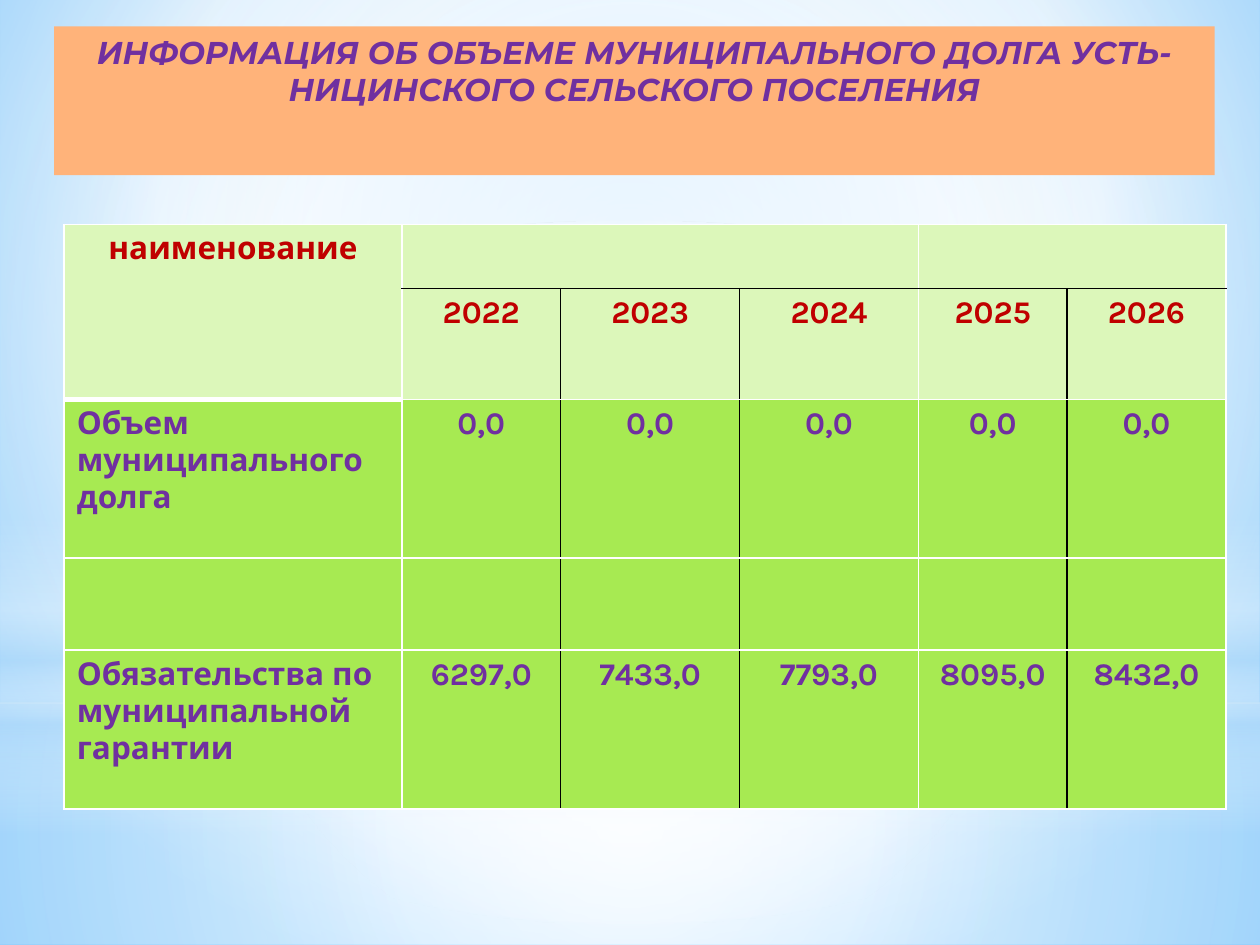
from lxml.etree import SubElement
from pptx import Presentation
from pptx.dml.color import RGBColor
from pptx.enum.shapes import MSO_SHAPE
from pptx.enum.text import MSO_ANCHOR, PP_ALIGN
from pptx.oxml.ns import qn
from pptx.util import Inches, Pt

WHITE = RGBColor(0xFF, 0xFF, 0xFF)
BLACK = RGBColor(0x00, 0x00, 0x00)
SKY = RGBColor(0x9E, 0xD5, 0xFF)
AZURE = RGBColor(0x5B, 0xB9, 0xFF)
HAZE = RGBColor(0xB4, 0xDC, 0xFA)
PEACH = RGBColor(0xFF, 0xB3, 0x7A)
PURPLE = RGBColor(0x70, 0x30, 0xA0)
RED = RGBColor(0xC0, 0x00, 0x00)
PALE_GREEN = RGBColor(0xDC, 0xF7, 0xBA)
GREEN = RGBColor(0xA7, 0xEA, 0x52)


def set_gradient(fill, owner, stops, focus):
    fill.solid()
    solid = owner.find(".//" + qn("a:solidFill"))
    gradient = SubElement(owner, qn("a:gradFill"), rotWithShape="1")
    solid.getparent().replace(solid, gradient)
    stop_list = SubElement(gradient, qn("a:gsLst"))
    for position, color, opacity in stops:
        stop = SubElement(stop_list, qn("a:gs"), pos=str(position * 1000))
        tint = SubElement(stop, qn("a:srgbClr"), val=str(color))
        if opacity < 100:
            SubElement(tint, qn("a:alpha"), val=str(opacity * 1000))
    if focus is None:
        SubElement(gradient, qn("a:lin"), ang="5400000", scaled="0")
    else:
        circle = SubElement(gradient, qn("a:path"), path="circle")
        sides = {side: str(share * 1000) for side, share in zip("ltrb", focus)}
        SubElement(circle, qn("a:fillToRect"), **sides)


def write_text(frame, text, alignment, font_format):
    paragraph = frame.paragraphs[0]
    paragraph.alignment = alignment
    run = paragraph.add_run()
    run.text = text
    run.font.color.rgb = font_format["color"]
    for attribute, value in font_format.items():
        if attribute != "color":
            setattr(run.font, attribute, value)


presentation = Presentation()
presentation.slide_width = Inches(10)
presentation.slide_height = Inches(7.5)
slide = presentation.slides.add_slide(presentation.slide_layouts[6])

backdrop = slide.background.fill
backdrop.solid()
set_gradient(backdrop, slide.element.find(".//" + qn("p:bgPr")),
             [(0, SKY, 100), (60, WHITE, 100), (100, AZURE, 100)], (20, 10, 20, 60))

CENTER = (50, 50, 50, 50)
glows = [
    (MSO_SHAPE.RECTANGLE, 5.58, 1.92, CENTER,
     [(0, WHITE, 91), (37, WHITE, 76), (100, HAZE, 79)]),
    (MSO_SHAPE.RECTANGLE, 0, 5.58, CENTER,
     [(0, WHITE, 89), (48, WHITE, 62), (100, HAZE, 79)]),
    (MSO_SHAPE.RECTANGLE, 4.12, 2.5, None,
     [(0, WHITE, 0), (29, WHITE, 30), (45, HAZE, 40),
      (55, WHITE, 26), (65, HAZE, 60), (100, WHITE, 0)]),
    (MSO_SHAPE.OVAL, 1.75, 5.58, CENTER, [(0, WHITE, 100), (56, WHITE, 0)]),
]
for outline, top, height, focus, stops in glows:
    glow = slide.shapes.add_shape(outline, 0, Inches(top), Inches(10), Inches(height))
    glow.shadow.inherit = False
    glow.line.fill.background()
    set_gradient(glow.fill, glow.element.spPr, stops, focus)

heading = slide.shapes.add_textbox(Inches(0.43), Inches(0.21), Inches(9.21), Inches(1.18))
heading.fill.solid()
heading.fill.fore_color.rgb = PEACH
heading.text_frame.word_wrap = True
heading.text_frame.vertical_anchor = MSO_ANCHOR.TOP
heading_format = {"name": "Montserrat", "size": Pt(18), "bold": True,
                  "italic": True, "color": PURPLE}
write_text(heading.text_frame,
           "ИНФОРМАЦИЯ ОБ ОБЪЕМЕ МУНИЦИПАЛЬНОГО ДОЛГА УСТЬ-НИЦИНСКОГО СЕЛЬСКОГО ПОСЕЛЕНИЯ",
           PP_ALIGN.CENTER, heading_format)

debt_rows = [
    ["наименование", "", "", "", "", ""],
    ["", "2022", "2023", "2024", "2025", "2026"],
    ["Объем муниципального долга"] + ["0,0"] * 5,
    [""] * 6,
    ["Обязательства по муниципальной гарантии",
     "6297,0", "7433,0", "7793,0", "8095,0", "8432,0"],
]
column_widths = [2.68, 1.26, 1.42, 1.42, 1.18, 1.26]
row_heights = [0.51, 0.88, 1.26, 0.73, 1.26]
black_edges = {1, 2, 4}

debt_table = slide.shapes.add_table(len(debt_rows), len(column_widths), Inches(0.51),
                                    Inches(1.78), Inches(9.21), Inches(4.65)).table
for column, width in zip(debt_table.columns, column_widths):
    column.width = Inches(width)
for row, height in zip(debt_table.rows, row_heights):
    row.height = Inches(height)

for r, labels in enumerate(debt_rows):
    for c, label in enumerate(labels):
        cell = debt_table.cell(r, c)
        is_header = r < 2
        cell.fill.solid()
        cell.fill.fore_color.rgb = PALE_GREEN if is_header else GREEN
        cell_format = {"name": "Karla", "size": Pt(18), "bold": True,
                       "color": RED if is_header else PURPLE}
        if label:
            alignment = PP_ALIGN.CENTER if is_header or c else PP_ALIGN.LEFT
            write_text(cell.text_frame, label, alignment, cell_format)
        borders = {
            "a:lnL": (BLACK if r and c - 1 in black_edges else WHITE, 1),
            "a:lnR": (BLACK if r and c in black_edges else WHITE, 1),
            "a:lnT": (BLACK if r == 1 and c else WHITE, 1),
            "a:lnB": (BLACK if r == 0 and c else WHITE, 3 if is_header and c == 0 else 1),
        }
        properties = cell._tc.get_or_add_tcPr()
        for order, (side, (color, weight)) in enumerate(borders.items()):
            border = SubElement(properties, qn(side), w=str(Pt(weight)))
            properties.insert(order, border)
            paint = SubElement(border, qn("a:solidFill"))
            SubElement(paint, qn("a:srgbClr"), val=str(color))

for first, last in [((0, 0), (1, 0)), ((0, 1), (0, 3)), ((0, 4), (0, 5))]:
    debt_table.cell(*first).merge(debt_table.cell(*last))

presentation.save("out.pptx")
